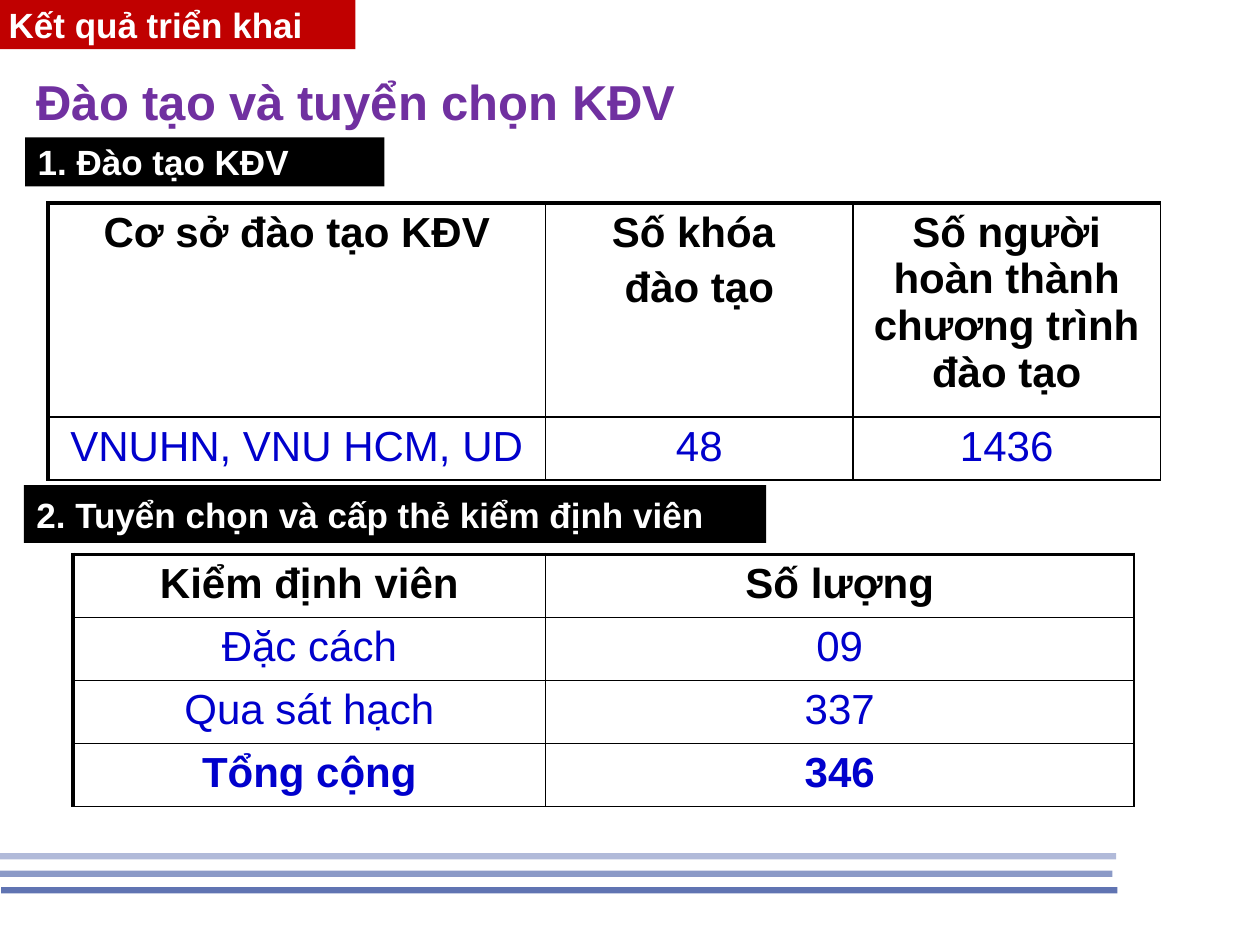
from dataclasses import dataclass

from lxml.etree import SubElement
from pptx import Presentation
from pptx.dml.color import RGBColor
from pptx.enum.shapes import MSO_SHAPE
from pptx.enum.text import MSO_ANCHOR, PP_ALIGN
from pptx.oxml.ns import qn
from pptx.util import Emu, Pt

PX = 9144  # 100 px to the inch


@dataclass(frozen=True)
class Theme:
    font: str = "Arial"
    title_size: int = 28
    table_size: int = 24
    label_size: int = 20
    title: str = "7030A0"
    banner: str = "C00000"
    label: str = "000000"
    label_text: str = "FFFFFF"
    header: str = "000000"
    value: str = "0000CC"
    border: str = "000000"
    stripe: str = "042386"
    thin: float = 1
    thick: float = 2.25


THEME = Theme()


def px(*lengths):
    return [Emu(length * PX) for length in lengths]


def write_text(frame, text, *, size, color, bold=True, align=PP_ALIGN.LEFT, gap=0):
    """Write one paragraph per line of text, with gap points between them."""
    for index, line in enumerate(text.split("\n")):
        para = frame.paragraphs[0] if index == 0 else frame.add_paragraph()
        para.alignment = align
        para.space_before = Pt(gap if index else 0)
        span = para.add_run()
        span.text = line
        span.font.name = THEME.font
        span.font.size = Pt(size)
        span.font.bold = bold
        span.font.color.rgb = RGBColor.from_string(color)


def add_bar(page, box, color, opacity=100):
    bar = page.shapes.add_shape(MSO_SHAPE.RECTANGLE, *px(*box))
    bar.shadow.inherit = False
    bar.line.fill.background()
    bar.fill.solid()
    bar.fill.fore_color.rgb = RGBColor.from_string(color)
    if opacity < 100:
        color_node = bar.fill._xPr.find(qn("a:solidFill"))[0]
        SubElement(color_node, qn("a:alpha"), val=str(opacity * 1000))
    return bar


def add_label(page, box, text, color):
    frame = add_bar(page, box, color).text_frame
    frame.word_wrap = True
    frame.vertical_anchor = MSO_ANCHOR.MIDDLE
    write_text(frame, text, size=THEME.label_size, color=THEME.label_text)


def add_title(page, box, text):
    title = page.shapes.title
    title.left, title.top, title.width, title.height = px(*box)
    title.text_frame.word_wrap = True
    title.text_frame.vertical_anchor = MSO_ANCHOR.MIDDLE
    write_text(title.text_frame, text, size=THEME.title_size, color=THEME.title)


def add_stripes(page, box):
    """Draw three stripes that grow stronger downwards."""
    left, top, width, height = box
    stripes = [(0, 0, width, 31), (4, 14, width - 7, 46), (8, 27, width - 7, 63)]
    for shift, drop, length, opacity in stripes:
        add_bar(page, (left + shift, top + drop, length, height), THEME.stripe, opacity)


def set_borders(cell, **widths):
    properties = cell._tc.get_or_add_tcPr()
    for side in "LRTB":
        line = SubElement(properties, qn(f"a:ln{side}"), w=str(Pt(widths[side])))
        fill = SubElement(line, qn("a:solidFill"))
        SubElement(fill, qn("a:srgbClr"), val=THEME.border)


def add_grid(page, corner, columns, heights, rows, total=False):
    """Add a table with a bold header and, if total is set, a bold last row."""
    box = (*corner, sum(columns), sum(heights))
    table = page.shapes.add_table(len(rows), len(columns), *px(*box)).table
    table.first_row = table.horz_banding = False
    for column, width in zip(table.columns, px(*columns)):
        column.width = width
    for row, height in zip(table.rows, px(*heights)):
        row.height = height
    for r, texts in enumerate(rows):
        is_header = r == 0
        is_total = total and r == len(rows) - 1
        for c, text in enumerate(texts):
            cell = table.cell(r, c)
            set_borders(
                cell,
                L=THEME.thin if c else THEME.thick,
                R=THEME.thin,
                T=THEME.thick if is_header else THEME.thin,
                B=THEME.thin,
            )
            cell.fill.background()
            write_text(
                cell.text_frame,
                text,
                size=THEME.table_size,
                color=THEME.header if is_header else THEME.value,
                bold=is_header or is_total,
                align=PP_ALIGN.CENTER,
                gap=THEME.table_size * 0.2,
            )


def add_training(page, box):
    left, top, _, _ = box
    add_label(page, (left, top, 285, 39), "1. Đào tạo KĐV", THEME.label)
    rows = [
        ("Cơ sở đào tạo KĐV", "Số khóa \nđào tạo", "Số người hoàn thành chương trình đào tạo"),
        ("VNUHN, VNU HCM, UD", "48", "1436"),
    ]
    add_grid(page, (left + 18, top + 52), (395, 244, 244), (170, 50), rows)


def add_selection(page, box):
    left, top, _, _ = box
    add_label(page, (left, top, 589, 46), "2. Tuyển chọn và cấp thẻ kiểm định viên", THEME.label)
    rows = [
        ("Kiểm định viên", "Số lượng"),
        ("Đặc cách", "09"),
        ("Qua sát hạch", "337"),
        ("Tổng cộng", "346"),
    ]
    add_grid(page, (left + 39, top + 55), (375, 467), [50] * len(rows), rows, total=True)


def main():
    deck = Presentation()
    deck.slide_width, deck.slide_height = px(1000, 750)
    page = deck.slides.add_slide(deck.slide_layouts[5])
    add_stripes(page, (-7, 677, 893, 5))
    add_label(page, (-3, 0, 285, 39), "Kết quả triển khai", THEME.banner)
    add_title(page, (19, 25, 938, 110), "Đào tạo và tuyển chọn KĐV")
    add_training(page, (20, 109, 901, 272))
    add_selection(page, (19, 385, 881, 255))
    deck.save("out.pptx")


if __name__ == "__main__":
    main()
